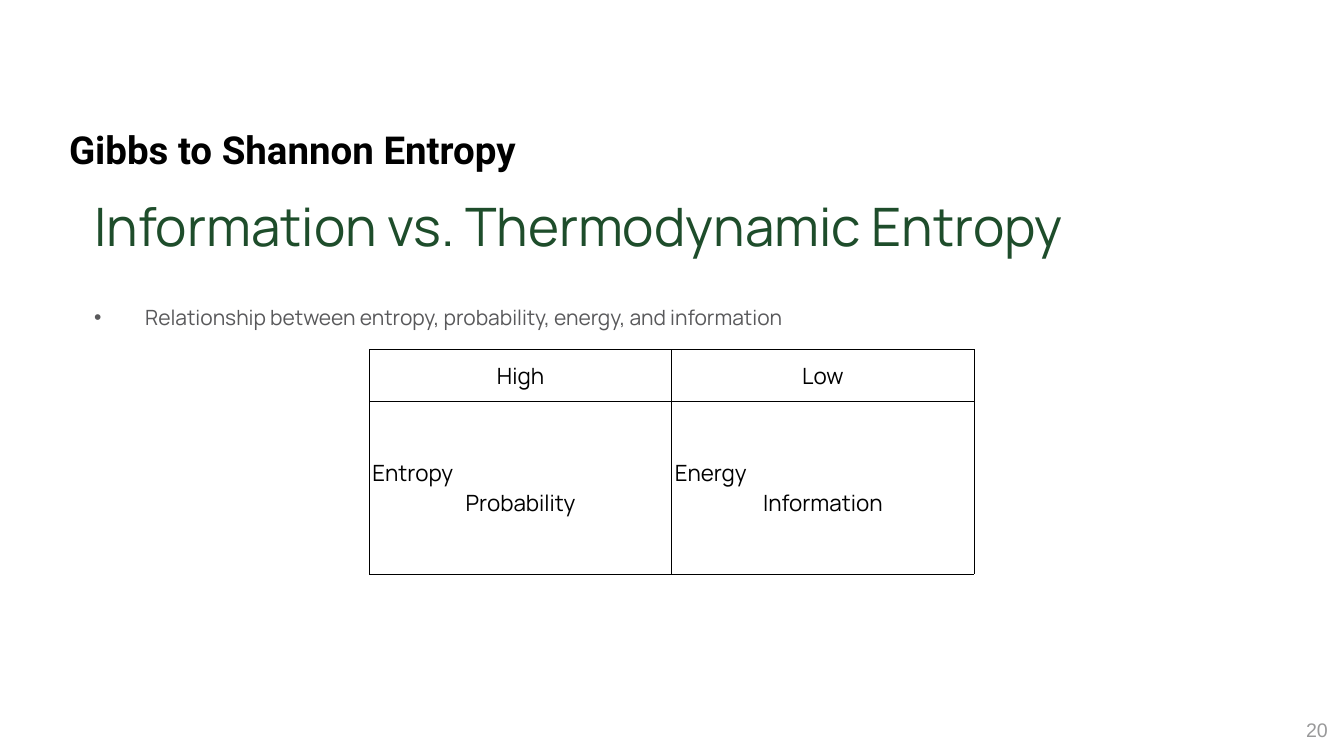
import pptx
import pptx.util
import pptx.dml.color
import pptx.enum.text
import pptx.oxml
import pptx.oxml.ns
from dataclasses import dataclass
from lxml import etree

Inches = pptx.util.Inches
Pt = pptx.util.Pt
Align = pptx.enum.text.PP_ALIGN
Anchor = pptx.enum.text.MSO_ANCHOR
qn = pptx.oxml.ns.qn


@dataclass(frozen=True)
class Style:
    size: float
    color: str
    face: str = "Manrope"
    bold: bool = False


@dataclass(frozen=True)
class Theme:
    title: Style = Style(75.7, "1E4D2B")
    head: Style = Style(55, "000000", "Roboto", True)
    body: Style = Style(30, "59595B")
    cell: Style = Style(32, "000000")
    page: Style = Style(28, "99999A", "Arial")
    line: str = "000000"
    width: float = 1


THEME = Theme()


def write(para, text, style, align=Align.LEFT):
    para.text = text
    para.alignment = align
    font = para.font
    font.size = Pt(style.size)
    font.name = style.face
    font.bold = style.bold
    font.color.rgb = pptx.dml.color.RGBColor.from_string(style.color)


def frame(shape, inset, anchor=Anchor.TOP, wrap=True):
    text = shape.text_frame
    text.word_wrap = wrap
    text.auto_size = pptx.enum.text.MSO_AUTO_SIZE.NONE
    text.vertical_anchor = anchor
    text.margin_left = text.margin_right = Inches(inset)
    text.margin_top = text.margin_bottom = Inches(inset)
    return text.paragraphs[0]


def add_title(slide, text, box):
    title = slide.shapes.title
    title.left, title.top, title.width, title.height = map(Inches, box)
    write(frame(title, 0.1), text, THEME.title)


def add_text(slide, box, inset, anchor=Anchor.TOP, wrap=True):
    shape = slide.shapes.add_textbox(*map(Inches, box))
    return frame(shape, inset, anchor, wrap)


def add_bullet(para, indent):
    props = para._p.get_or_add_pPr()
    props.set("marL", str(Inches(indent)))
    props.set("indent", str(-Inches(indent)))
    etree.SubElement(props, qn("a:buFont")).set("typeface", "Arial")
    etree.SubElement(props, qn("a:buChar")).set("char", "•")


def add_border(cell):
    props = cell._tc.get_or_add_tcPr()
    for index, side in enumerate(("lnL", "lnR", "lnT", "lnB")):
        line = etree.Element(qn(f"a:{side}"), w=str(Pt(THEME.width)))
        fill = etree.SubElement(line, qn("a:solidFill"))
        etree.SubElement(fill, qn("a:srgbClr")).set("val", THEME.line)
        props.insert(index, line)


def fill_cell(cell, lines):
    cell.fill.background()
    add_border(cell)
    cell.vertical_anchor = Anchor.MIDDLE
    cell.margin_left = cell.margin_right = Inches(0.06)
    cell.margin_top = cell.margin_bottom = Inches(0.06)
    text = cell.text_frame
    for index, line in enumerate(lines):
        para = text.add_paragraph() if index else text.paragraphs[0]
        last = index == len(lines) - 1
        write(para, line, THEME.cell, Align.CENTER if last else Align.LEFT)


def add_table(slide, rows, box, heights):
    shape = slide.shapes.add_table(len(rows), len(rows[0]), *map(Inches, box))
    table = shape.table
    table.first_row = table.horz_banding = False
    for row, height, cells in zip(table.rows, heights, rows):
        row.height = Inches(height)
        for cell, lines in zip(row.cells, cells):
            fill_cell(cell, lines)


def main():
    deck = pptx.Presentation()
    deck.slide_width, deck.slide_height = Inches(26.67), Inches(15)
    slide = deck.slides.add_slide(deck.slide_layouts[5])

    add_title(slide, "Information vs. Thermodynamic Entropy", (1.77, 3.73, 23.92, 1.68))

    body = add_text(slide, (1.77, 5.84, 23.92, 7.78), 0.1)
    add_bullet(body, 1.01)
    write(body, "Relationship between entropy, probability, energy, and information", THEME.body)
    body.line_spacing = 1.2

    head = add_text(slide, (1.32, 2.46, 24.03, 1.02), 0.05)
    write(head, "Gibbs to Shannon Entropy", THEME.head)

    rows = [
        [["High"], ["Low"]],
        [["Entropy", "Probability"], ["Energy", "Information"]],
    ]
    add_table(slide, rows, (7.33, 6.94, 12, 4.45), (1.03, 3.42))

    page = add_text(slide, (25.85, 14.22, 0.55, 0.53), 0.05, Anchor.MIDDLE, False)
    write(page, "20", THEME.page, Align.RIGHT)

    deck.save("out.pptx")


if __name__ == "__main__":
    main()
